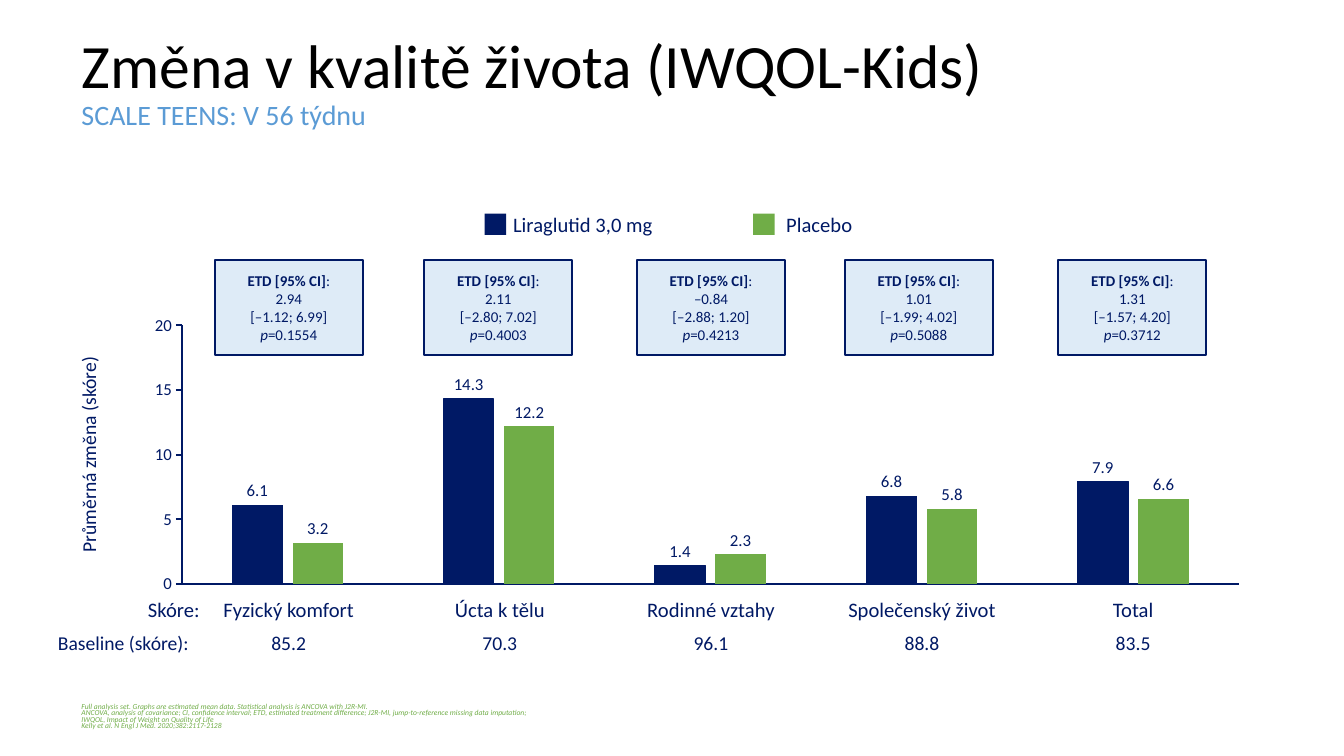
from lxml.etree import SubElement
from pptx import Presentation
from pptx.chart.data import CategoryChartData
from pptx.dml.color import RGBColor
from pptx.enum.chart import XL_CHART_TYPE, XL_LABEL_POSITION, XL_TICK_LABEL_POSITION, XL_TICK_MARK
from pptx.enum.shapes import MSO_SHAPE
from pptx.enum.text import MSO_ANCHOR, PP_ALIGN
from pptx.oxml.ns import qn
from pptx.util import Pt

FONT = "Calibri"
BLACK = RGBColor(0x00, 0x00, 0x00)
NAVY = RGBColor(0x00, 0x19, 0x65)
GREEN = RGBColor(0x70, 0xAD, 0x47)
BLUE = RGBColor(0x5B, 0x9B, 0xD5)
PALE_BLUE = RGBColor(0xDE, 0xEB, 0xF7)

TITLE = "Změna v kvalitě života (IWQOL-Kids)"
SUBTITLE = "SCALE TEENS: V 56 týdnu"
AXIS_TITLE = "Průměrná změna (skóre)"
SCORE_LABEL = "Skóre:"
BASELINE_LABEL = "Baseline (skóre):"
FOOTNOTES = [
    "Full analysis set. Graphs are estimated mean data. Statistical analysis is ANCOVA with J2R-MI. ",
    "ANCOVA, analysis of covariance; CI, confidence interval; ETD, estimated treatment difference; "
    "J2R-MI, jump-to-reference missing data imputation; ",
    "IWQOL, Impact of Weight on Quality of Life",
    "Kelly et al. N Engl J Med. 2020;382:2117-2128",
]

# name, baseline, treatment difference, confidence interval, p value, left edge of box
DOMAINS = [
    ("Fyzický komfort", "85.2", "2.94", "[–1.12; 6.99]", "0.1554", 153.4),
    ("Úcta k tělu", "70.3", "2.11", "[–2.80; 7.02]", "0.4003", 303.1),
    ("Rodinné vztahy", "96.1", "–0.84", "[–2.88; 1.20]", "0.4213", 455),
    ("Společenský život", "88.8", "1.01", "[–1.99; 4.02]", "0.5088", 603.4),
    ("Total", "83.5", "1.31", "[–1.57; 4.20]", "0.3712", 756),
]
# name, colour, values, left edge of legend swatch, left edge of legend text
SERIES = [
    ("Liraglutid 3,0 mg", NAVY, (6.1, 14.3, 1.4, 6.8, 7.9), 346.2, 366.5),
    ("Placebo", GREEN, (3.2, 12.2, 2.3, 5.8, 6.6), 538, 561.6),
]

FIRST_CENTER, CENTER_STEP, LABEL_WIDTH = 206.2, 150.8, 137
SCORE_TOP, BASELINE_TOP = 422.6, 447.1
PLOT_AREA = {"x": 0.076, "y": 0.323, "w": 0.891, "h": 0.629}


def add_run(paragraph, text, size, color=NAVY, bold=False, italic=False):
    run = paragraph.add_run()
    run.text = text
    font = run.font
    font.name, font.size, font.bold, font.italic = FONT, Pt(size), bold, italic
    font.color.rgb = color


def prepare_frame(shape, anchor, margins, wrap):
    frame = shape.text_frame
    frame.word_wrap, frame.vertical_anchor = wrap, anchor
    frame.margin_left, frame.margin_right = Pt(margins[0]), Pt(margins[0])
    frame.margin_top, frame.margin_bottom = Pt(margins[1]), Pt(margins[1])
    return frame


def add_text(slide, box, lines, align=PP_ALIGN.LEFT, anchor=MSO_ANCHOR.TOP,
             margins=(7.2, 3.6), wrap=False, spacing=1.0, italic=False):
    """Add a text box; each line is (text, size, colour) and becomes a paragraph."""
    shape = slide.shapes.add_textbox(*map(Pt, box))
    frame = prepare_frame(shape, anchor, margins, wrap)
    for index, (text, size, color) in enumerate(lines):
        paragraph = frame.add_paragraph() if index else frame.paragraphs[0]
        paragraph.alignment, paragraph.line_spacing = align, spacing
        add_run(paragraph, text, size, color, italic=italic)
    return shape


def add_box(slide, box, fill):
    shape = slide.shapes.add_shape(MSO_SHAPE.RECTANGLE, *map(Pt, box))
    shape.shadow.inherit = False
    shape.fill.solid()
    shape.fill.fore_color.rgb = fill
    shape.line.fill.background()
    return shape


def add_difference_box(slide, left, difference, interval, p_value):
    shape = add_box(slide, (left, 185.8, 105.8, 67.9), PALE_BLUE)
    shape.line.color.rgb = NAVY
    shape.line.width = Pt(1.5)
    frame = prepare_frame(shape, MSO_ANCHOR.MIDDLE, (3.6, 3.6), False)
    rows = [
        [("ETD [95% CI]", True, False), (":", False, False)],
        [(difference, False, False)],
        [(interval, False, False)],
        [("p", False, True), ("=" + p_value, False, False)],
    ]
    for index, row in enumerate(rows):
        paragraph = frame.add_paragraph() if index else frame.paragraphs[0]
        paragraph.alignment = PP_ALIGN.CENTER
        for text, bold, italic in row:
            add_run(paragraph, text, 10.7, NAVY, bold, italic)


def set_plot_area(chart):
    """Fix the inner plot area as fractions of the chart."""
    plot_area = chart._chartSpace.chart.plotArea
    layout = plot_area.find(qn("c:layout"))
    if layout is None:
        layout = SubElement(plot_area, qn("c:layout"))
        plot_area.insert(0, layout)
    manual = SubElement(layout, qn("c:manualLayout"))
    settings = [("layoutTarget", "inner"), ("xMode", "edge"), ("yMode", "edge")]
    for tag, value in settings + list(PLOT_AREA.items()):
        SubElement(manual, qn("c:" + tag)).set("val", str(value))


def add_score_chart(slide):
    data = CategoryChartData()
    data.categories = [domain[0] for domain in DOMAINS]
    for name, _, values, _, _ in SERIES:
        data.add_series(name, values)
    chart = slide.shapes.add_chart(XL_CHART_TYPE.COLUMN_CLUSTERED, Pt(65.5), Pt(137.5),
                                   Pt(847.4), Pt(293.8), data).chart
    chart.has_legend = chart.has_title = False
    chart.font.name, chart.font.size = FONT, Pt(12)
    chart.font.color.rgb = NAVY
    set_plot_area(chart)

    category_axis, value_axis = chart.category_axis, chart.value_axis
    for axis in (category_axis, value_axis):
        axis.has_major_gridlines = False
        axis.format.line.color.rgb = NAVY
        axis.format.line.width = Pt(1.5)
    category_axis.major_tick_mark = XL_TICK_MARK.NONE
    category_axis.tick_label_position = XL_TICK_LABEL_POSITION.NONE
    value_axis.major_tick_mark = XL_TICK_MARK.OUTSIDE
    value_axis.minimum_scale, value_axis.maximum_scale, value_axis.major_unit = 0, 20, 5
    value_axis.tick_labels.number_format = "#,##0"
    value_axis.tick_labels.number_format_is_linked = False

    plot = chart.plots[0]
    plot.gap_width, plot.overlap, plot.vary_by_categories = 199, -20, False
    for series, (_, color, _, _, _) in zip(plot.series, SERIES):
        series.format.fill.solid()
        series.format.fill.fore_color.rgb = color
        labels = series.data_labels
        labels.show_value, labels.position = True, XL_LABEL_POSITION.OUTSIDE_END
        labels.number_format, labels.number_format_is_linked = "#,##0.0", False
        labels.font.name, labels.font.size = FONT, Pt(12)
        labels.font.color.rgb = NAVY
    plot.series[0].format.line.color.rgb = NAVY
    plot.series[0].format.line.width = Pt(0.75)


def main():
    presentation = Presentation()
    presentation.slide_width, presentation.slide_height = Pt(960), Pt(540)
    slide = presentation.slides.add_slide(presentation.slide_layouts[6])

    add_text(slide, (51.1, 8.6, 858.2, 102.2), [(TITLE, 44, BLACK), (SUBTITLE, 20, BLUE)],
             anchor=MSO_ANCHOR.MIDDLE, wrap=True, spacing=0.9)
    add_text(slide, (51.1, 499.7, 858.2, 25.2), [(line, 5.4, GREEN) for line in FOOTNOTES],
             anchor=MSO_ANCHOR.BOTTOM, wrap=True, spacing=0.7, italic=True)
    add_score_chart(slide)
    axis_title = add_text(slide, (-28.8, 312.5, 184.3, 24.5), [(AXIS_TITLE, 14, NAVY)],
                          PP_ALIGN.CENTER, wrap=True)
    axis_title.rotation = 270

    for name, color, _, swatch_left, text_left in SERIES:
        add_box(slide, (swatch_left, 152.6, 15.3, 15.3), color)
        add_text(slide, (text_left, 151.4, 118, 18), [(name, 14.7, NAVY)], margins=(0, 0))

    for index, (name, baseline, difference, interval, p_value, left) in enumerate(DOMAINS):
        label_left = FIRST_CENTER + index * CENTER_STEP - LABEL_WIDTH / 2
        add_text(slide, (label_left, SCORE_TOP, LABEL_WIDTH, 25.2), [(name, 14.7, NAVY)],
                 PP_ALIGN.CENTER)
        add_text(slide, (label_left, BASELINE_TOP, LABEL_WIDTH, 24.5), [(baseline, 14, NAVY)],
                 PP_ALIGN.CENTER, MSO_ANCHOR.MIDDLE)
        add_difference_box(slide, left, difference, interval, p_value)

    add_text(slide, (92.2, SCORE_TOP, 57.6, 25.2), [(SCORE_LABEL, 14.7, NAVY)], PP_ALIGN.RIGHT)
    add_text(slide, (26.6, BASELINE_TOP, 123.1, 24.5), [(BASELINE_LABEL, 14, NAVY)],
             PP_ALIGN.CENTER, MSO_ANCHOR.MIDDLE)
    presentation.save("out.pptx")


if __name__ == "__main__":
    main()
